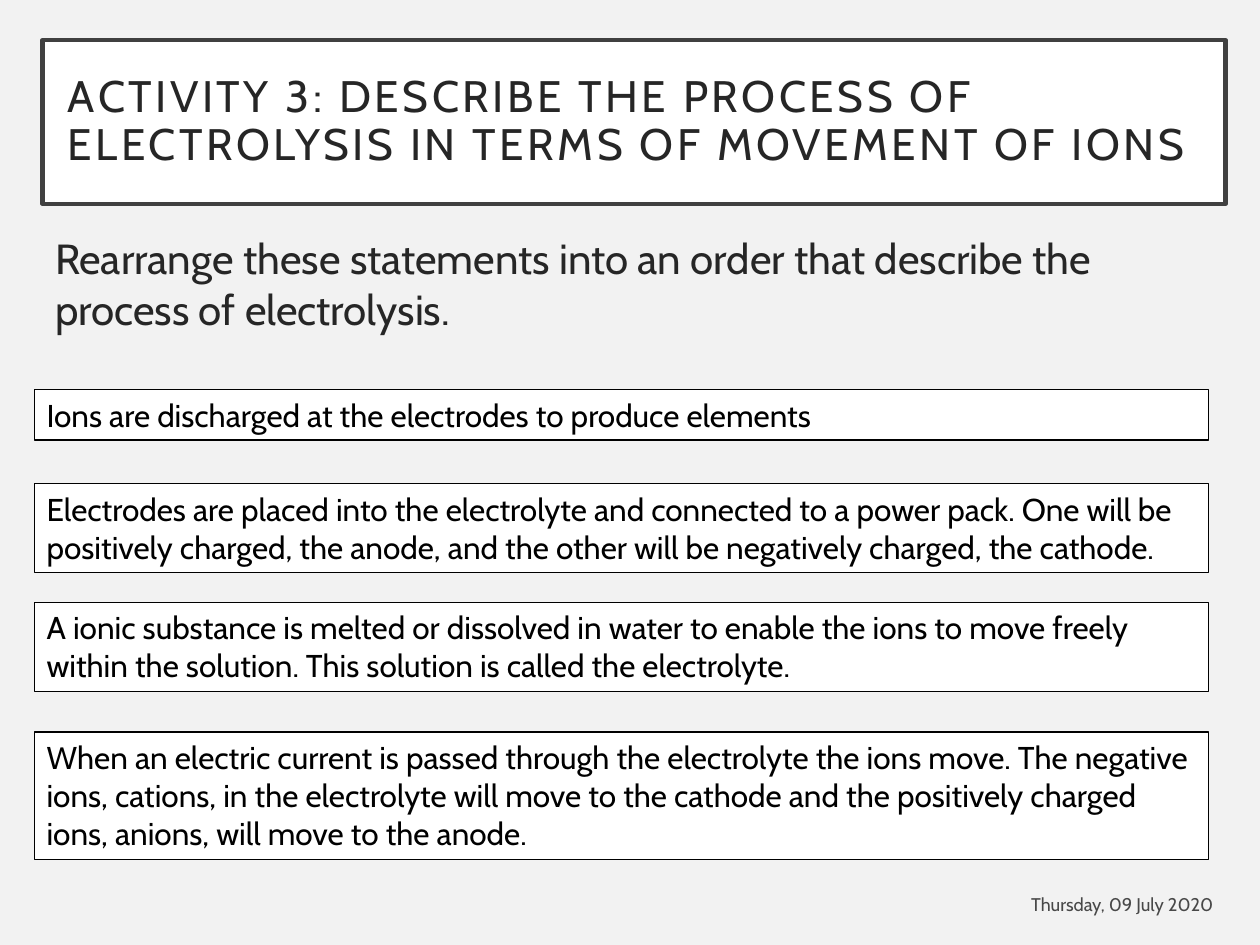
from dataclasses import dataclass

from lxml.etree import SubElement
from pptx import Presentation
from pptx.dml.color import RGBColor
from pptx.enum.shapes import MSO_SHAPE as Preset
from pptx.enum.text import MSO_ANCHOR as Anchor, MSO_AUTO_SIZE as AutoSize, PP_ALIGN as Align
from pptx.oxml.ns import qn
from pptx.util import Cm, Pt


@dataclass(frozen=True)
class Theme:
    """Colours and type sizes of the slide."""
    font: str = "Cabin"
    background: RGBColor = RGBColor(0xF2, 0xF2, 0xF2)
    panel: RGBColor = RGBColor(0xFF, 0xFF, 0xFF)
    frame: RGBColor = RGBColor(0x40, 0x40, 0x40)
    heading: RGBColor = RGBColor(0x26, 0x26, 0x26)
    ink: RGBColor = RGBColor(0, 0, 0)
    title_size: float = 25.2
    task_size: float = 24
    statement_size: float = 18
    date_size: float = 10.5


THEME = Theme()
TITLE = "ACTIVITY 3: DESCRIBE THE PROCESS OF ELECTROLYSIS IN TERMS OF MOVEMENT OF IONS"
TASK = "Rearrange these statements into an order that describe the process of electrolysis."
DATE = "Thursday, 09 July 2020"
STATEMENTS = [
    (0, 1.02, "Ions are discharged at the electrodes to produce elements"),
    (1.9, 1.8, "Electrodes are placed into the electrolyte and connected to a power pack. "
     "One will be positively charged, the anode, and the other will be negatively charged, "
     "the cathode."),
    (4.29, 1.8, "A ionic substance is melted or dissolved in water to enable the ions to move "
     "freely within the solution. This solution is called the electrolyte."),
    (6.91, 2.57, "When an electric current is passed through the electrolyte the ions move. "
     "The negative ions, cations, in the electrolyte will move to the cathode and the "
     "positively charged ions, anions, will move to the anode."),
]


def write_text(shape, text, size, color, anchor=Anchor.TOP, align=Align.LEFT):
    """Write one wrapped paragraph into a shape and return the paragraph."""
    frame = shape.text_frame
    frame.word_wrap = True
    frame.vertical_anchor = anchor
    paragraph = frame.paragraphs[0]
    paragraph.text = text
    paragraph.alignment = align
    paragraph.font.name = THEME.font
    paragraph.font.size = Pt(size)
    paragraph.font.color.rgb = color
    return paragraph


def add_panel(slide, box, line_color, line_width):
    """Add a white outlined rectangle in the given box."""
    shape = slide.shapes.add_shape(Preset.RECTANGLE, *map(Cm, box))
    shape.shadow.inherit = False
    shape.fill.solid()
    shape.fill.fore_color.rgb = THEME.panel
    shape.line.color.rgb = line_color
    shape.line.width = Pt(line_width)
    return shape


def add_title(slide, box):
    """Add the framed heading with widely spaced letters."""
    shape = add_panel(slide, box, THEME.frame, 2.5)
    frame = shape.text_frame
    frame.margin_left = frame.margin_right = frame.margin_top = frame.margin_bottom = Cm(0.51)
    paragraph = write_text(shape, TITLE, THEME.title_size, THEME.heading, Anchor.MIDDLE)
    paragraph.line_spacing = 0.9
    paragraph.runs[0].font._element.set("spc", "200")


def add_task(slide, box):
    """Add the instruction under the heading."""
    shape = slide.shapes.add_textbox(*map(Cm, box))
    paragraph = write_text(shape, TASK, THEME.task_size, THEME.heading)
    paragraph.space_before = Pt(10)


def add_statements(slide, box):
    """Add the statement cards at their offsets within the box."""
    left, top, width, _ = box
    for offset, height, text in STATEMENTS:
        card = add_panel(slide, (left, top + offset, width, height), THEME.ink, 0.75)
        write_text(card, text, THEME.statement_size, THEME.ink)
        card.text_frame.auto_size = AutoSize.SHAPE_TO_FIT_TEXT


def add_date(slide, box):
    """Add the right-aligned, slightly transparent date."""
    shape = slide.shapes.add_textbox(*map(Cm, box))
    paragraph = write_text(shape, DATE, THEME.date_size, THEME.ink, Anchor.MIDDLE, Align.RIGHT)
    color = next(paragraph.font._element.iter(qn("a:srgbClr")))
    SubElement(color, qn("a:alpha"), val="70000")


def main():
    """Build and save the one-slide presentation."""
    presentation = Presentation()
    presentation.slide_width = Cm(25.4)
    presentation.slide_height = Cm(19.05)
    slide = presentation.slides.add_slide(presentation.slide_layouts[6])
    slide.background.fill.solid()
    slide.background.fill.fore_color.rgb = THEME.background
    add_title(slide, (0.86, 0.81, 23.85, 3.3))
    add_task(slide, (0.86, 4.57, 23.88, 12.19))
    add_date(slide, (18.97, 17.78, 5.74, 0.89))
    add_statements(slide, (0.69, 7.85, 23.67, 9.48))
    presentation.save("out.pptx")


if __name__ == "__main__":
    main()
